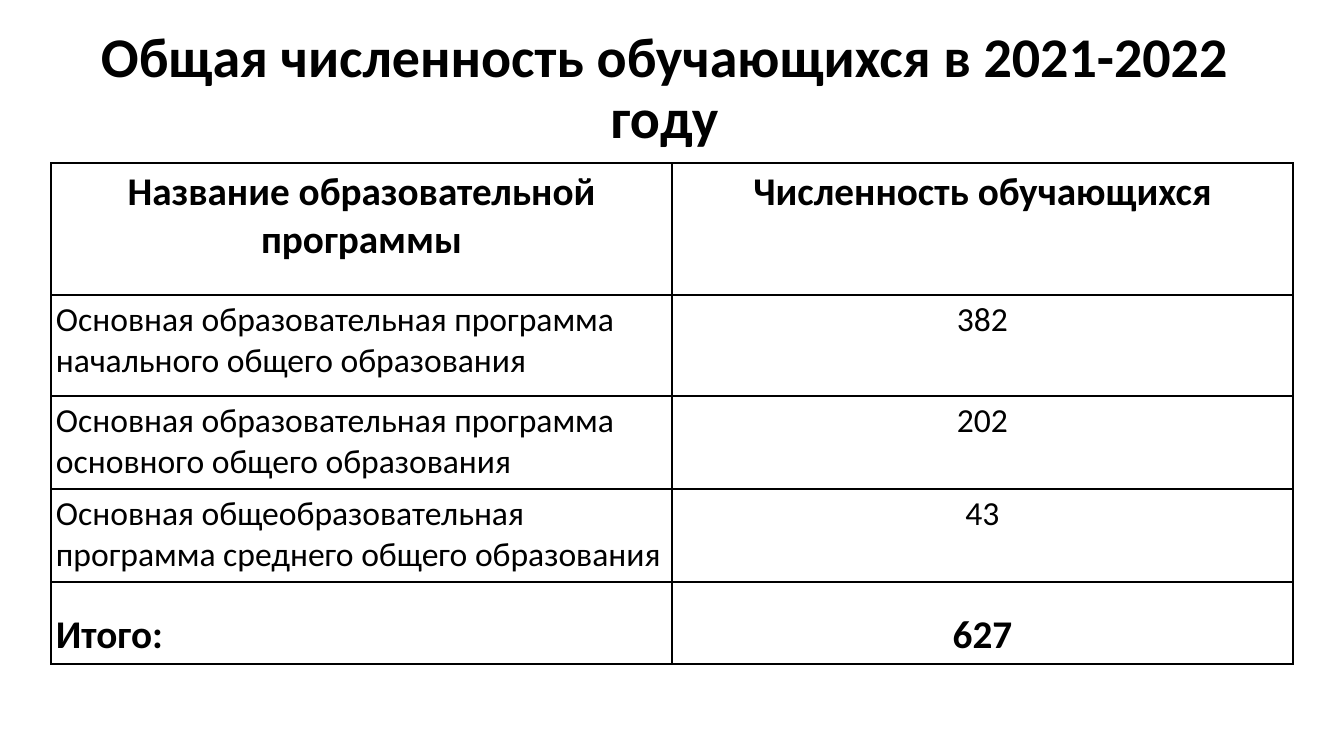
"""Slide with a table of student numbers by educational programme, 2021-2022."""
from lxml.etree import SubElement
from pptx import Presentation
from pptx.dml.color import RGBColor
from pptx.enum.text import MSO_ANCHOR as Anchor, PP_ALIGN as Align
from pptx.oxml.ns import qn
from pptx.util import Pt

PX = 914400 / 100.8
COLORS = {"ink": "000000", "paper": "FFFFFF"}
TITLE = {"size": Pt(40), "bold": True}
HEADING = {"size": Pt(28), "bold": True}
BODY = {"size": Pt(24), "bold": False}


def px(length):
    return round(length * PX)


def write(frame, text, font_format, align, spacing):
    paragraph = frame.paragraphs[0]
    paragraph.alignment = align
    paragraph.line_spacing = spacing
    run = paragraph.add_run()
    run.text = text
    run.font.name = "Calibri"
    run.font.color.rgb = RGBColor.from_string(COLORS["ink"])
    for name, value in font_format.items():
        setattr(run.font, name, value)


programmes = [
    ("Название образовательной программы", "Численность обучающихся", 132, HEADING, 1.0),
    ("Основная образовательная программа начального общего образования", "382", 101, BODY, 1.0),
    ("Основная образовательная программа основного общего образования", "202", 93, BODY, 1.0),
    ("Основная общеобразовательная программа среднего общего образования", "43", 93, BODY, 1.0),
    ("Итого:", "627", 82, HEADING, 1.5),
]

prs = Presentation()
prs.slide_width, prs.slide_height = px(1344), px(756)
slide = prs.slides.add_slide(prs.slide_layouts[6])

title = slide.shapes.add_textbox(px(36), px(17), px(1257), px(146)).text_frame
title.word_wrap = True
title.vertical_anchor = Anchor.MIDDLE
write(title, "Общая численность обучающихся в 2021-2022 году", TITLE, Align.CENTER, 0.9)

total_height = sum(programme[2] for programme in programmes)
students = slide.shapes.add_table(
    len(programmes), 2, px(51), px(163), px(1242), px(total_height)
).table
students.horz_banding = False

for row, (programme, count, height, font_format, spacing) in enumerate(programmes):
    students.rows[row].height = px(height)
    for column, text in enumerate((programme, count)):
        cell = students.cell(row, column)
        for side in ("left", "right", "top", "bottom"):
            setattr(cell, f"margin_{side}", px(5))
        centred = row == 0 or column == 1
        write(cell.text_frame, text, font_format, Align.CENTER if centred else Align.LEFT, spacing)

        properties = cell._tc.get_or_add_tcPr()
        for edge in ("a:lnL", "a:lnR", "a:lnT", "a:lnB"):
            border = SubElement(properties, qn(edge), w=str(Pt(1)))
            ink = SubElement(border, qn("a:solidFill"))
            SubElement(ink, qn("a:srgbClr"), val=COLORS["ink"])
        cell.fill.solid()
        cell.fill.fore_color.rgb = RGBColor.from_string(COLORS["paper"])

prs.save("out.pptx")
